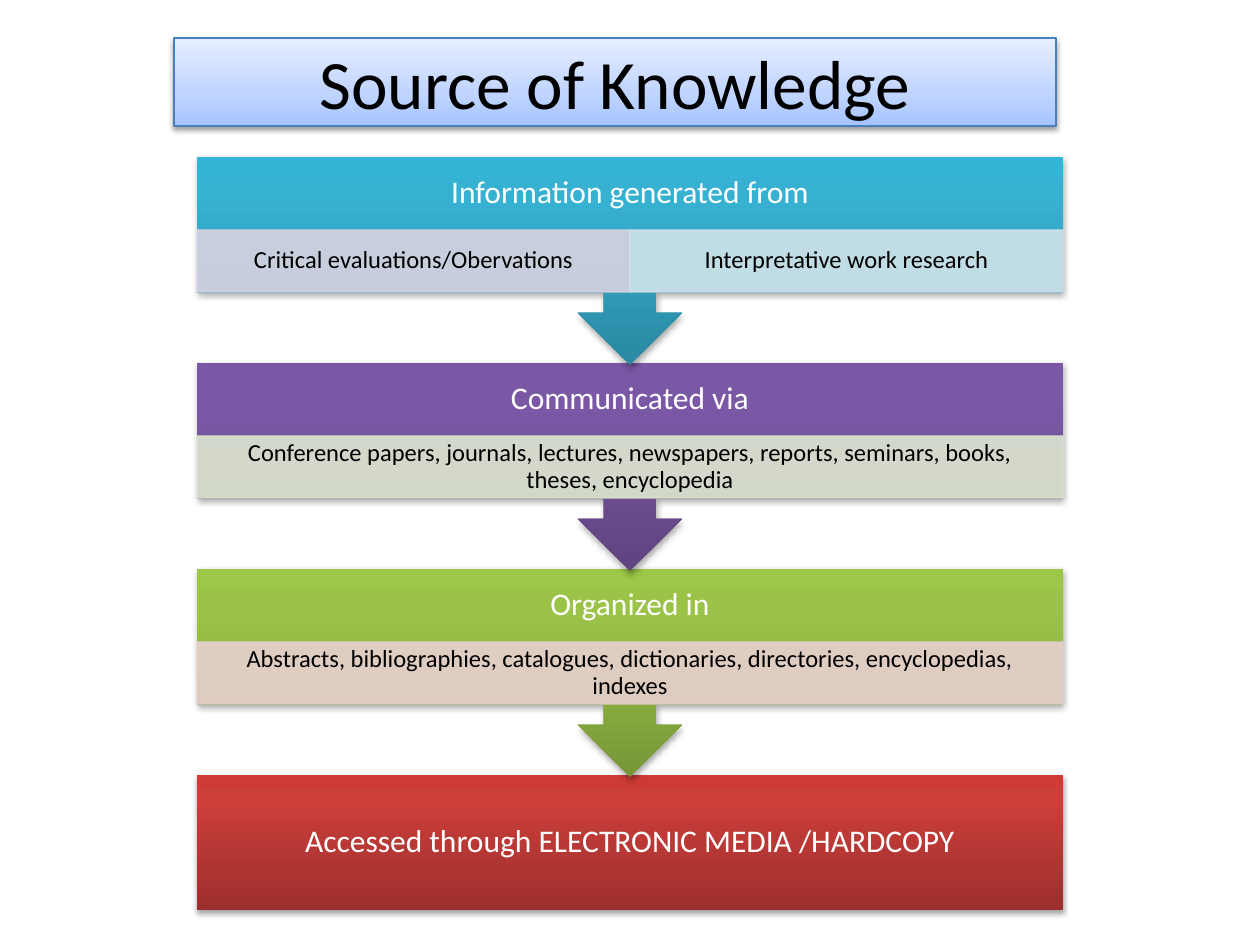
from copy import deepcopy
from dataclasses import dataclass

from lxml.etree import SubElement
from pptx import Presentation
from pptx.dml.color import RGBColor
from pptx.enum.shapes import MSO_SHAPE
from pptx.enum.text import MSO_ANCHOR, PP_ALIGN
from pptx.oxml.ns import qn
from pptx.util import Pt

PX = 914400 / 126


def px(length):
    return round(length * PX)


@dataclass(frozen=True)
class Theme:
    font: str = "Calibri"
    title_size: float = 39.6
    heading_size: float = 18
    detail_size: float = 14
    dark: str = "000000"
    light: str = "FFFFFF"
    title_line: str = "4B7EBC"
    # Gradients run from bottom to top as (percent, colour) stops.
    title_fill: tuple = ((0, "A4C4FF"), (35, "BFD4FF"), (100, "E6EEFF"))
    teal: tuple = ((0, "2A88A2"), (80, "37B1D2"), (100, "34B4D6"))
    purple: tuple = ((0, "5F4480"), (80, "7B58A6"), (100, "7C57A8"))
    green: tuple = ((0, "779737"), (80, "9BC348"), (100, "9DC746"))
    red: tuple = ((0, "9C2F2D"), (80, "CB3E3A"), (100, "CE3B37"))
    lavender: str = "D8D3E0"
    ice: str = "D0E3EA"
    sage: str = "DEE7D1"
    rose: str = "E8D0D0"


class SlideBuilder:
    def __init__(self, slide, theme):
        self.slide = slide
        self.theme = theme

    def set_text(self, shape, text, size, color, insets, spacing=None):
        frame = shape.text_frame
        frame.word_wrap = True
        frame.vertical_anchor = MSO_ANCHOR.MIDDLE
        frame.margin_left = frame.margin_right = px(insets[0])
        frame.margin_top = frame.margin_bottom = px(insets[1])
        frame.text = text
        paragraph = frame.paragraphs[0]
        paragraph.alignment = PP_ALIGN.CENTER
        paragraph.line_spacing = spacing
        font = paragraph.runs[0].font
        font.name = self.theme.font
        font.size = Pt(size)
        font.color.rgb = RGBColor.from_string(color)

    def gradient_shape(self, kind, box, stops, shadow_alpha=35, shadow_distance=1.8):
        """Add a borderless shape with a vertical gradient and a soft shadow below."""
        shape = self.slide.shapes.add_shape(kind, *map(px, box))
        shape.line.fill.background()
        shape.fill.gradient()
        shape.fill.gradient_angle = 90
        stop_list = shape._element.spPr.find(".//" + qn("a:gsLst"))
        stop_list.append(deepcopy(stop_list[-1]))
        for stop, (percent, color) in zip(shape.fill.gradient_stops, stops):
            stop.position = percent / 100
            stop.color.rgb = RGBColor.from_string(color)
        shape.shadow.inherit = False
        effects = shape._element.spPr.find(qn("a:effectLst"))
        shadow = SubElement(effects, qn("a:outerShdw"), blurRad=str(Pt(3.1)),
                            dist=str(Pt(shadow_distance)), dir="5400000", rotWithShape="0")
        color = SubElement(shadow, qn("a:srgbClr"), val=self.theme.dark)
        SubElement(color, qn("a:alpha"), val=str(shadow_alpha * 1000))
        return shape

    def title(self, box, text):
        shape = self.gradient_shape(MSO_SHAPE.RECTANGLE, box, self.theme.title_fill, 38, 1.6)
        shape.line.color.rgb = RGBColor.from_string(self.theme.title_line)
        shape.line.width = Pt(0.75)
        self.set_text(shape, text, self.theme.title_size, self.theme.dark, (13, 6))

    def heading(self, shape, text):
        self.set_text(shape, text, self.theme.heading_size, self.theme.light, (18, 18), 0.9)

    def final_step(self, box, text, stops):
        self.heading(self.gradient_shape(MSO_SHAPE.RECTANGLE, box, stops), text)

    def detail(self, box, text, color):
        shape = self.slide.shapes.add_shape(MSO_SHAPE.RECTANGLE, *map(px, box))
        shape.shadow.inherit = False
        shape.fill.solid()
        shape.line.width = Pt(0.75)
        for target in (shape.fill.fore_color, shape.line.color):
            target.rgb = RGBColor.from_string(color)
        for node in shape._element.spPr.findall(".//" + qn("a:srgbClr")):
            SubElement(node, qn("a:alpha"), val="90000")
        self.set_text(shape, text, self.theme.detail_size, self.theme.dark, (14, 3), 0.9)

    def arrow_step(self, box, text, stops, details):
        """Add a callout pointing down, with a heading and a row of equal detail cells."""
        left, top, width, _ = box
        heading_height, detail_height = 73, 62
        self.gradient_shape(MSO_SHAPE.DOWN_ARROW_CALLOUT, box, stops)
        heading_box = (left, top, width, heading_height)
        self.heading(self.slide.shapes.add_textbox(*map(px, heading_box)), text)
        cell_width = width // len(details)
        for index, (detail, color) in enumerate(details):
            cell = (left + index * cell_width, top + heading_height, cell_width, detail_height)
            self.detail(cell, detail, color)


def main():
    theme = Theme()
    presentation = Presentation()
    presentation.slide_width, presentation.slide_height = px(1260), px(945)
    slide = presentation.slides.add_slide(presentation.slide_layouts[6])
    builder = SlideBuilder(slide, theme)
    builder.title((174, 38, 882, 88), "Source of Knowledge")

    left, top, width, pitch = 197, 157, 866, 206
    steps = [
        ("Information generated from", theme.teal,
         [("Critical evaluations/Obervations", theme.lavender),
          ("Interpretative work research", theme.ice)]),
        ("Communicated via", theme.purple,
         [("Conference papers, journals, lectures, newspapers, reports, seminars, "
           "books, theses, encyclopedia", theme.sage)]),
        ("Organized in", theme.green,
         [("Abstracts, bibliographies, catalogues, dictionaries, directories, "
           "encyclopedias, indexes", theme.rose)]),
    ]
    builder.final_step((left, top + len(steps) * pitch, width, 135),
                       "Accessed through ELECTRONIC MEDIA /HARDCOPY", theme.red)
    # Later steps go first so that each arrow tip lies over the step below it.
    for index, (text, stops, details) in reversed(list(enumerate(steps))):
        builder.arrow_step((left, top + index * pitch, width, 208), text, stops, details)

    presentation.save("out.pptx")


if __name__ == "__main__":
    main()
